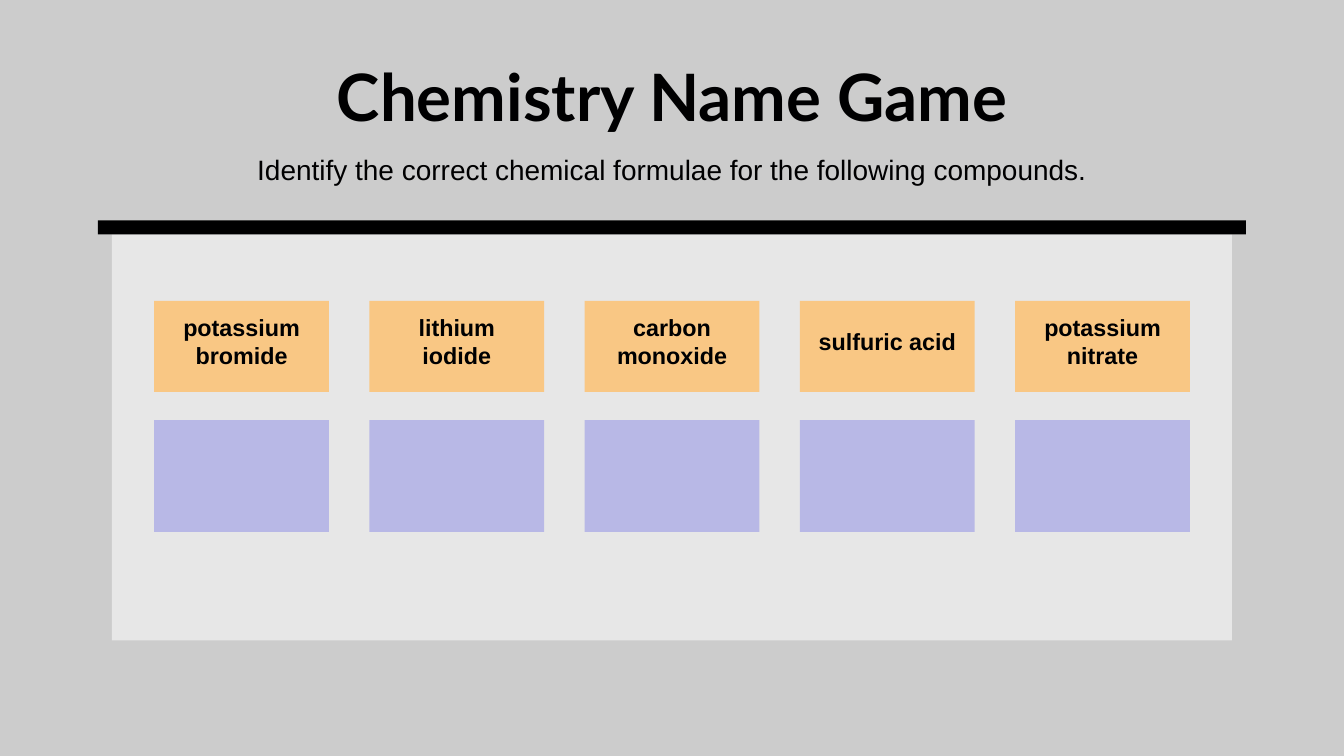
"""Build the Chemistry Name Game slide on a grid of 96 columns by 54 rows."""
from pptx import Presentation
from pptx import util as u
from pptx.dml import color
from pptx.enum import shapes, text

prs = Presentation()
prs.slide_width, prs.slide_height = u.Inches(20), u.Inches(11.25)
COLS, ROWS = 96, 54
UNIT = prs.slide_width / COLS
INK, PANEL, NAME, ANSWER = "000001", "E7E7E7", "F9C784", "B8B8E6"

s = prs.slides.add_slide(prs.slide_layouts[6])
s.background.fill.solid()
s.background.fill.fore_color.rgb = color.RGBColor.from_string("CCCCCC")


def add_block(col, row, width, height, fill):
    box = [round(n * UNIT) for n in (col, row, width, height)]
    sp = s.shapes.add_shape(shapes.MSO_SHAPE.RECTANGLE, *box)
    sp.shadow.inherit = False
    sp.fill.solid()
    sp.fill.fore_color.rgb = color.RGBColor.from_string(fill)
    sp.line.fill.background()


def add_text(col, row, width, height, words, font, size, leading, bold=True, inset=0, anchor="TOP"):
    box = [round(n * UNIT) for n in (col, row, width, height)]
    tf = s.shapes.add_textbox(*box).text_frame
    tf.word_wrap = True
    tf.vertical_anchor = text.MSO_ANCHOR[anchor]
    tf.margin_left = tf.margin_right = tf.margin_top = tf.margin_bottom = u.Inches(inset)
    tf.text = words
    p = tf.paragraphs[0]
    p.alignment = text.PP_ALIGN.CENTER
    p.line_spacing = u.Pt(leading)
    r = p.runs[0]
    r.font.name, r.font.size, r.font.bold = font, u.Pt(size), bold
    r.font.color.rgb = color.RGBColor.from_string(INK)


add_block(8, 16.75, COLS - 16, 29, PANEL)

compounds = ["potassium bromide", "lithium iodide", "carbon monoxide", "sulfuric acid", "potassium nitrate"]
margin, card = 11, 12.5
pitch = (COLS - 2 * margin - card) / (len(compounds) - 1)
for i, compound in enumerate(compounds):
    col = margin + i * pitch
    add_block(col, 21.5, card, 6.5, NAME)
    add_text(col, 20.8, card, 7.2, compound, "Arial", 25, 30,
             inset=0.19 if i else 0.03, anchor="MIDDLE")
    add_block(col, 30, card, 8, ANSWER)

add_block(7, 15.75, COLS - 14, 1, INK)
add_text(8, 10.7, COLS - 16, 2.93,
         "Identify the correct chemical formulae for the following compounds.",
         "Arial", 30, 39, bold=False)
add_text(8, 4.27, COLS - 16, 5.47, "Chemistry Name Game", "Lato", 70, 80.5)

prs.save("out.pptx")
